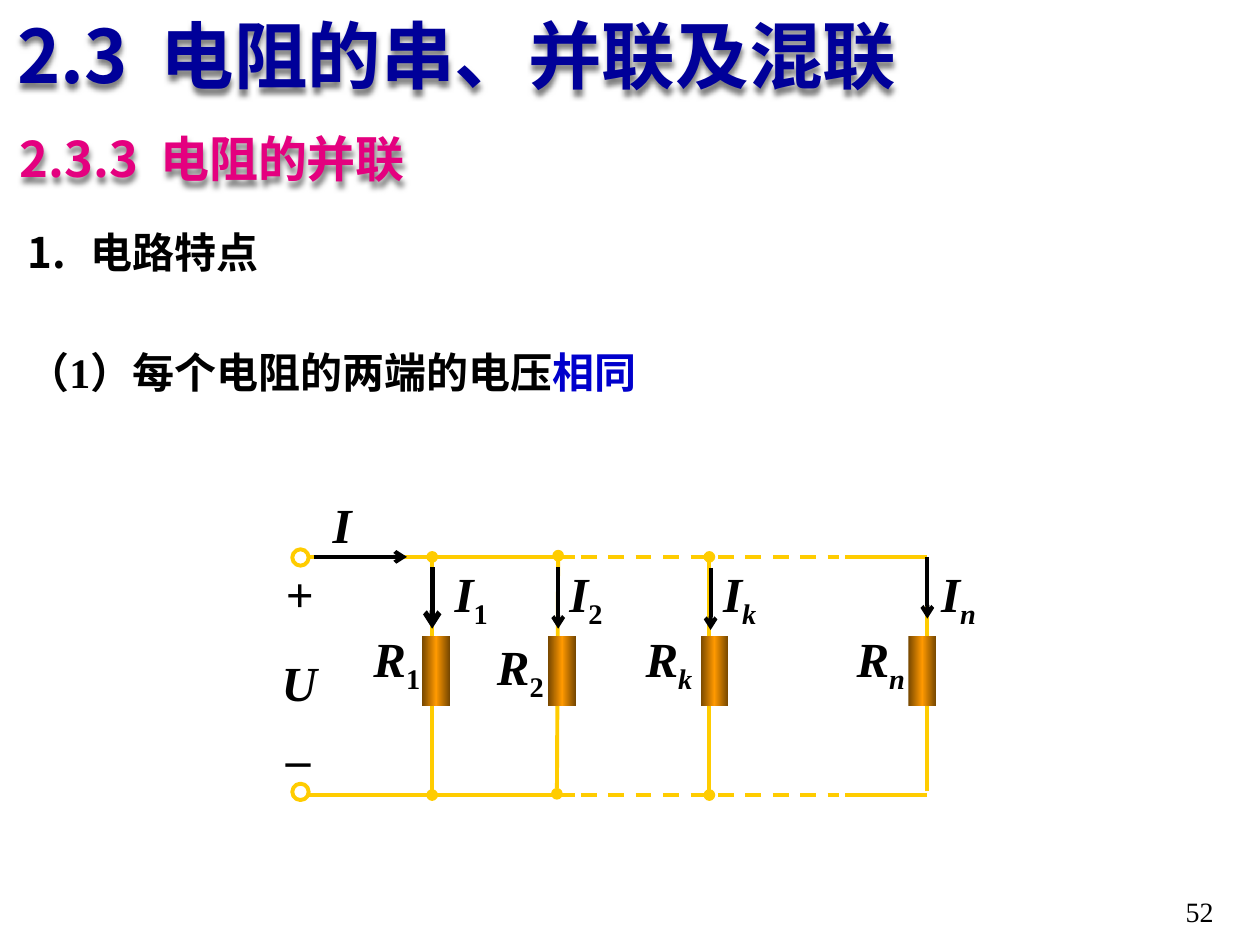
from lxml import etree
from pptx import Presentation
from pptx.dml.color import RGBColor
from pptx.enum.dml import MSO_LINE_DASH_STYLE as DASH
from pptx.enum.shapes import MSO_CONNECTOR, MSO_SHAPE
from pptx.enum.text import MSO_ANCHOR, PP_ALIGN
from pptx.oxml.ns import qn
from pptx.util import Inches, Pt

SANS, SERIF = "Noto Sans CJK SC", "Times New Roman"
BLACK, NAVY, BLUE, PINK, WIRE = "000000", "000099", "0000CC", "E4007F", "FFCC00"
TOP, BOTTOM = 4.42, 6.31


def rgb(value):
    return RGBColor.from_string(value)


def add_box(slide, x, y, w, h, wrap=True, middle=False, align=None):
    s = slide.shapes.add_textbox(Inches(x), Inches(y), Inches(w), Inches(h))
    tf = s.text_frame
    tf.word_wrap = wrap
    if middle:
        tf.vertical_anchor = MSO_ANCHOR.MIDDLE
    p = tf.paragraphs[0]
    p.alignment = align
    return s, p


def add_run(p, text, size, color=BLACK, font=SERIF, bold=True, italic=False,
            sub=False, spacing=0):
    r = p.add_run()
    r.text = text
    f = r.font
    f.size, f.name, f.bold, f.italic = Pt(size), font, bold, italic
    f.color.rgb = rgb(color)
    rpr = r._r.get_or_add_rPr()
    ea = etree.Element(qn("a:ea"), typeface=SANS)
    rpr.find(qn("a:latin")).addnext(ea)
    if sub:
        rpr.set("baseline", "-25000")
    if spacing:
        rpr.set("spc", str(spacing))


def add_heading(slide, box, number, title, size, color, wrap):
    s, p = add_box(slide, *box, wrap=wrap)
    # The gap after the number is one widened space
    for text, spacing in ((number, 0), (" ", size * 22), (title, 0)):
        add_run(p, text, size, color, SANS, spacing=spacing)
    effects = etree.SubElement(s._element.spPr, qn("a:effectLst"))
    shadow = etree.SubElement(effects, qn("a:outerShdw"), blurRad="38100",
                              dist="38100", dir="5400000", algn="t")
    clr = etree.SubElement(shadow, qn("a:srgbClr"), val=BLACK)
    etree.SubElement(clr, qn("a:alpha"), val="50000")


def add_body(slide, box, runs, numbered=False):
    _, p = add_box(slide, *box, align=PP_ALIGN.JUSTIFY)
    p.line_spacing, p.space_after = 1.5, Pt(18)
    if numbered:
        ppr = p._p.get_or_add_pPr()
        ppr.set("marL", str(Inches(0.5)))
        ppr.set("indent", str(-Inches(0.5)))
        etree.SubElement(ppr, qn("a:buFont"), typeface=SANS)
        etree.SubElement(ppr, qn("a:buAutoNum"), type="arabicPeriod")
    for text, color in runs:
        add_run(p, text, 24, color)


def add_symbol(slide, box, text, sub="", italic=True, centred=True, wrap=False):
    _, p = add_box(slide, *box, wrap=wrap, middle=centred,
                   align=PP_ALIGN.CENTER if centred else None)
    add_run(p, text, 28, italic=italic)
    if sub:
        add_run(p, sub, 28, italic=sub.isalpha(), sub=True)


def add_line(slide, x1, y1, x2, y2, color=WIRE, width=2.25, dash=False,
             head=None, tail=None):
    c = slide.shapes.add_connector(MSO_CONNECTOR.STRAIGHT, Inches(x1), Inches(y1),
                                   Inches(x2), Inches(y2))
    c.line.color.rgb, c.line.width = rgb(color), Pt(width)
    if dash:
        c.line.dash_style = DASH.DASH
    ln = c.line._get_or_add_ln()
    for tag, kind in (("a:headEnd", head), ("a:tailEnd", tail)):
        if kind:
            etree.SubElement(ln, qn(tag), type=kind)
    etree.SubElement(c._element.spPr, qn("a:effectLst"))


def add_shape(slide, kind, x, y, w, h):
    s = slide.shapes.add_shape(kind, Inches(x), Inches(y), Inches(w), Inches(h))
    s.shadow.inherit = False
    return s


def add_terminal(slide, y):
    s = add_shape(slide, MSO_SHAPE.OVAL, 2.32, y, 0.13, 0.13)
    s.fill.background()
    s.line.color.rgb, s.line.width = rgb(WIRE), Pt(2.25)


def add_resistor(slide, x):
    s = add_shape(slide, MSO_SHAPE.RECTANGLE, x, 5.05, 0.22, 0.55)
    s.line.fill.background()
    s.fill.gradient()
    s.fill.gradient_angle = 0
    stops = s.fill._fill._gradFill.find(qn("a:gsLst"))
    for old in list(stops):
        stops.remove(old)
    for pos, color in ((0, "764700"), (50, "FF9900"), (100, "764700")):
        gs = etree.SubElement(stops, qn("a:gs"), pos=str(pos * 1000))
        etree.SubElement(gs, qn("a:srgbClr"), val=color)


def add_rail(slide, y):
    add_line(slide, 2.44, y, 4.56, y)
    add_line(slide, 4.61, y, 6.66, y, dash=True)
    add_line(slide, 6.71, y, 7.36, y)


def add_circuit(slide):
    # Rails and source terminals
    for y in (TOP, BOTTOM):
        add_rail(slide, y)
    for y in (4.36, 6.22):
        add_terminal(slide, y)

    # Branch wires; the first three have junction dots
    for x1, y1, x2, y2, dot in ((3.43, BOTTOM, 3.43, TOP, "oval"),
                                (4.42, 6.3, 4.43, 4.41, "oval"),
                                (5.63, BOTTOM, 5.63, TOP, "oval"),
                                (7.36, 6.28, 7.36, TOP, None)):
        add_line(slide, x1, y1, x2, y2, head=dot, tail=dot)

    # Branches: index, resistor left, R label, I label left, arrow x, y and width
    branches = (("1", 3.35, 2.85, 4.97, 3.51, 3.43, 4.5, 3),
                ("2", 4.35, 3.83, 5.03, 4.42, 4.43, 4.5, 2.25),
                ("k", 5.56, 5.01, 4.97, 5.64, 5.64, 4.51, 2.25),
                ("n", 7.21, 6.69, 4.97, 7.37, 7.36, TOP, 2.25))
    for sub, res_x, r_x, r_y, i_x, x, y, width in branches:
        add_line(slide, x, y, x, y + 0.49, BLACK, width, tail="arrow")
        add_resistor(slide, res_x)
        add_symbol(slide, (r_x, r_y, 0.6, 0.57), "R", sub)
        add_symbol(slide, (i_x, TOP, 0.62, 0.57), "I", sub, centred=False, wrap=True)

    # Total current and source voltage
    add_line(slide, 2.49, TOP, 3.23, TOP, BLACK, tail="arrow")
    add_symbol(slide, (2.54, 3.87, 0.35, 0.57), "I")
    add_symbol(slide, (2.17, TOP, 0.42, 0.57), "+", italic=False)
    add_symbol(slide, (2.13, 5.13, 0.49, 0.57), "U")
    add_symbol(slide, (2.17, 5.6, 0.4, 0.57), "_", italic=False, centred=False)


def main():
    prs = Presentation()
    prs.slide_width, prs.slide_height = Inches(10), Inches(7.5)
    slide = prs.slides.add_slide(prs.slide_layouts[6])

    # Headings and text
    add_heading(slide, (0.04, 0.03, 9.13, 0.81), "2.3", "电阻的串、并联及混联",
                42, NAVY, wrap=True)
    add_heading(slide, (0.06, 0.97, 3.36, 0.57), "2.3.3", "电阻的并联",
                28, PINK, wrap=False)
    add_body(slide, (0.12, 1.55, 9.61, 0.71), [("电路特点", BLACK)], numbered=True)
    add_body(slide, (0.12, 2.5, 8.43, 0.71),
             [("（1）每个电阻的两端的电压", BLACK), ("相同", BLUE)])

    add_circuit(slide)

    # Page number
    _, p = add_box(slide, 8.31, 7.05, 1.42, 0.4, align=PP_ALIGN.RIGHT)
    add_run(p, "52", 16, bold=False)

    prs.save("out.pptx")


if __name__ == "__main__":
    main()
